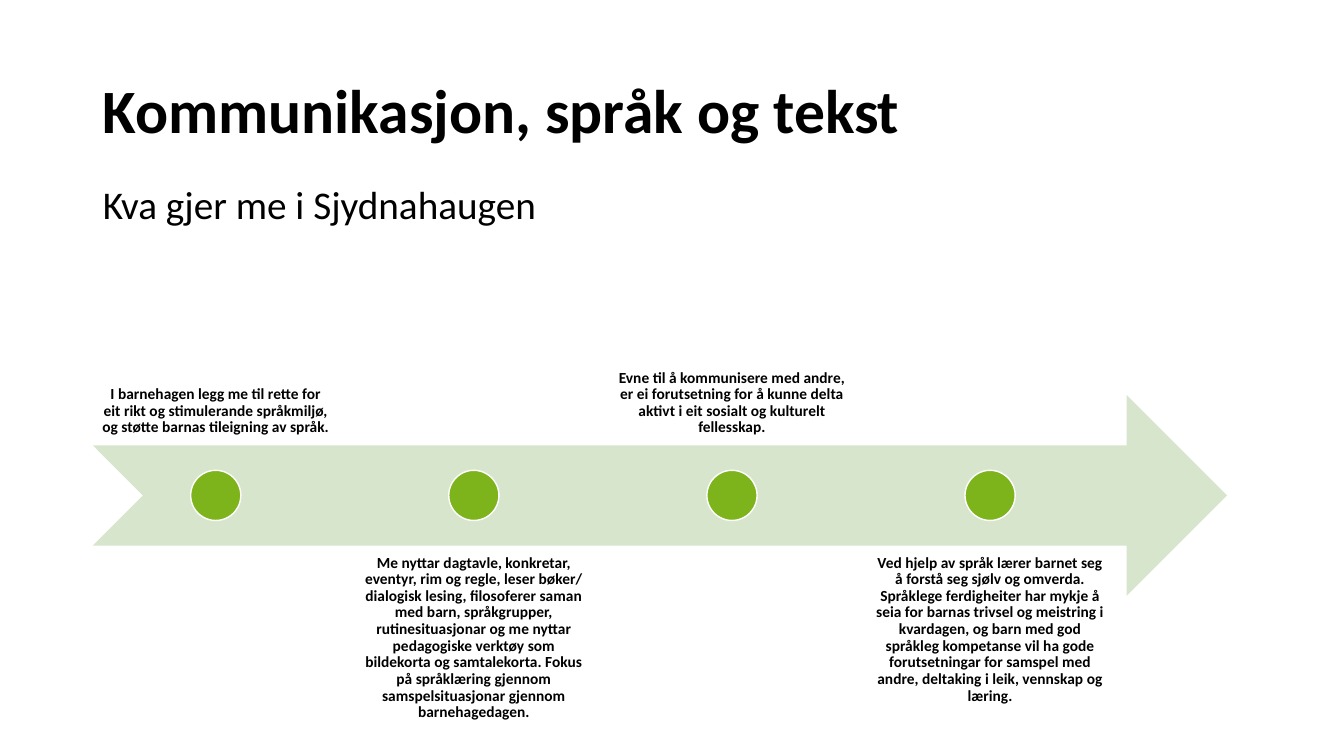
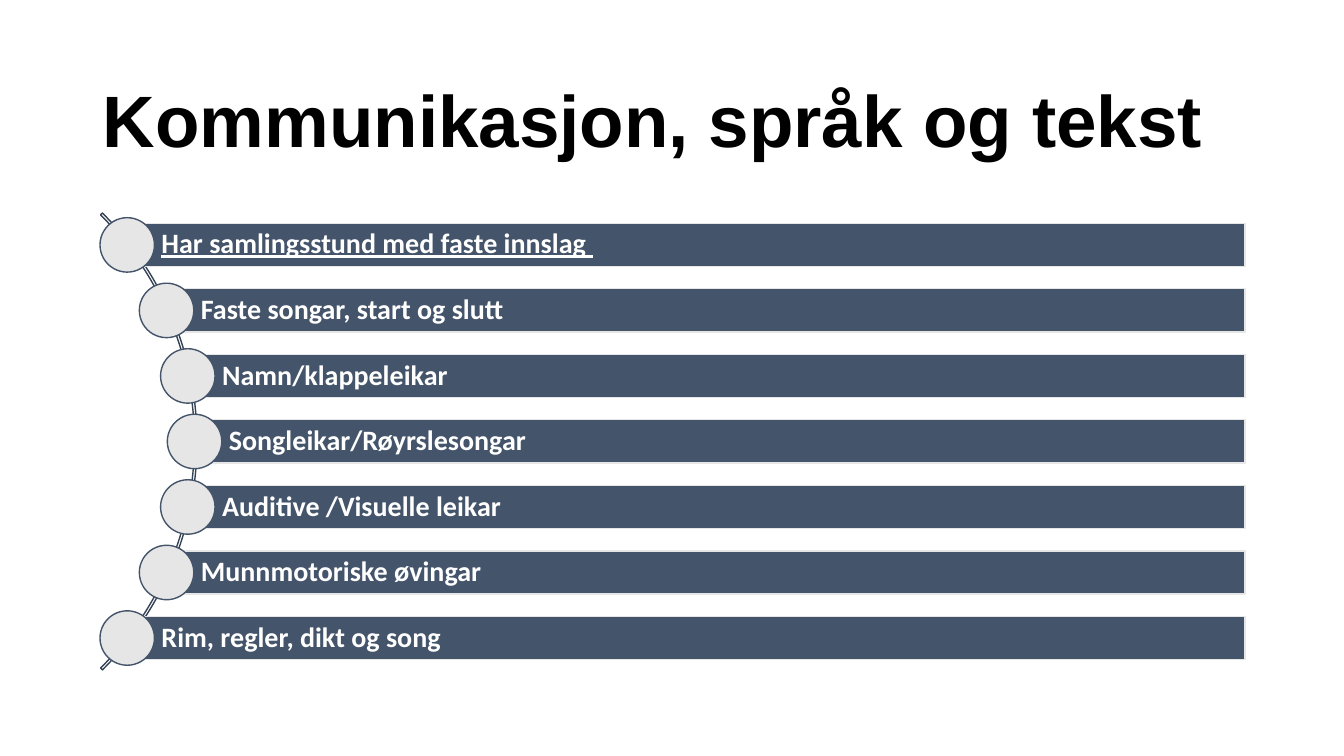
import math
import pptx
import pptx.util
import pptx.dml.color
import pptx.enum.shapes
import pptx.enum.text
import pptx.oxml

WIDE, HIGH = 13.33, 7.5
LEFT, SPAN = 0.92, 11.5
THEME = {
    "black": "000000", "white": "FFFFFF", "pale": "D7E5CD", "green": "7DB41B",
    "slate": "44546A", "grey": "E7E6E6", "dark": "364355",
    "font": "Calibri", "plain": "Arial",
    "title": 44, "large": 52, "lead": 28, "item": 20, "note": 11,
}
TITLE = "Kommunikasjon, språk og tekst"
LEAD = "Kva gjer me i Sjydnahaugen"
STEPS = [
    "I barnehagen legg me til rette for eit rikt og stimulerande språkmiljø, "
    "og støtte barnas tileigning av språk.",
    "Me nyttar dagtavle, konkretar, eventyr, rim og regle, leser bøker/ "
    "dialogisk lesing, filosoferer saman med barn, språkgrupper, "
    "rutinesituasjonar og me nyttar pedagogiske verktøy som bildekorta og "
    "samtalekorta. Fokus på språklæring gjennom samspelsituasjonar gjennom "
    "barnehagedagen.",
    "Evne til å kommunisere med andre, er ei forutsetning for å kunne delta "
    "aktivt i eit sosialt og kulturelt fellesskap.",
    "Ved hjelp av språk lærer barnet seg å forstå seg sjølv og omverda. "
    "Språklege ferdigheiter har mykje å seia for barnas trivsel og meistring "
    "i kvardagen, og barn med god språkleg kompetanse vil ha gode "
    "forutsetningar for samspel med andre, deltaking i leik, vennskap og "
    "læring.",
]
ITEMS = [
    "Har samlingsstund med faste innslag ",
    "Faste songar, start og slutt",
    "Namn/klappeleikar",
    "Songleikar/Røyrslesongar",
    "Auditive /Visuelle leikar",
    "Munnmotoriske øvingar",
    "Rim, regler, dikt og song",
]

KIND = pptx.enum.shapes.MSO_SHAPE
ALIGN = pptx.enum.text.PP_ALIGN
ANCHOR = pptx.enum.text.MSO_ANCHOR


def tint(name):
    return pptx.dml.color.RGBColor.from_string(THEME[name])


def place(shape, box):
    shape.left, shape.top, shape.width, shape.height = map(pptx.util.Inches, box)


def write(shape, text, size="note", color="black", font="font", bold=True,
          under=None, align=ALIGN.LEFT, anchor=ANCHOR.TOP,
          inset=(0.1, 0.05, 0.1, 0.05)):
    frame = shape.text_frame
    frame.word_wrap = True
    frame.auto_size = pptx.enum.text.MSO_AUTO_SIZE.NONE
    frame.vertical_anchor = anchor
    (frame.margin_left, frame.margin_top,
     frame.margin_right, frame.margin_bottom) = map(pptx.util.Inches, inset)
    frame.text = text
    para = frame.paragraphs[0]
    para.alignment = align
    para.line_spacing = 0.9
    para.space_before = pptx.util.Pt(0)
    face = para.runs[0].font
    face.name, face.size = THEME[font], pptx.util.Pt(THEME[size])
    face.bold, face.underline = bold, under
    face.color.rgb = tint(color)


def draw(slide, kind, box, fill=None, line=None):
    shape = slide.shapes.add_shape(kind, *map(pptx.util.Inches, box))
    shape.shadow.inherit = False
    if fill:
        shape.fill.solid()
        shape.fill.fore_color.rgb = tint(fill)
    else:
        shape.fill.background()
    if line:
        shape.line.color.rgb = tint(line)
        shape.line.width = pptx.util.Pt(1)
    else:
        shape.line.fill.background()
    return shape


def disc(slide, x, y, size, fill, line):
    draw(slide, KIND.OVAL, (x - size / 2, y - size / 2, size, size), fill, line)


def start(deck, layout, top, high, **style):
    slide = deck.slides.add_slide(deck.slide_layouts[layout])
    title = slide.shapes.title
    place(title, (LEFT, top, SPAN, high))
    write(title, TITLE, anchor=ANCHOR.MIDDLE, **style)
    return slide


def arrow(deck):
    slide = start(deck, 1, 0.4, 1.45, size="title")
    body = slide.placeholders[1]
    place(body, (LEFT, 1.79, SPAN, 5.51))
    write(body, LEAD, size="lead", bold=False)
    props = body.text_frame.paragraphs[0]._p.get_or_add_pPr()
    props.set("marL", "0")
    props.set("indent", "0")
    props.append(pptx.oxml.parse_xml(
        '<a:buNone xmlns:a="http://schemas.openxmlformats.org/drawingml/2006/main"/>'))

    top, high, wide, pitch = 3.92, 1.99, 2.44, 2.56
    mid = top + high / 2
    draw(slide, KIND.NOTCHED_RIGHT_ARROW, (LEFT, top, 11.25, high), "pale")
    for pos, text in enumerate(STEPS):
        x = LEFT + pos * pitch
        above = pos % 2 == 0
        y = mid - high * 1.25 if above else mid + high / 4
        note = slide.shapes.add_textbox(*map(pptx.util.Inches, (x, y, wide, high)))
        write(note, text, align=ALIGN.CENTER, inset=(0.09,) * 4,
              anchor=ANCHOR.BOTTOM if above else ANCHOR.TOP)
        disc(slide, x + wide / 2, mid, high / 4, "green", "white")


def curve(deck):
    slide = start(deck, 5, 0.61, 1.24, size="large", font="plain")
    hub, mid, side, reach = -1.255, 4.375, 6.41, 3.18
    hub, mid = round(hub, 2), round(mid, 2)
    pitch, right, high, dot = 0.65, 12.35, 0.43, 0.54
    arc = draw(slide, KIND.BLOCK_ARC,
               (hub - side / 2, mid - side / 2, side, side), line="dark")
    for pos, value in enumerate((189, 27, 0.004)):
        arc.adjustments[pos] = value
    for pos, text in enumerate(ITEMS):
        drop = (pos - (len(ITEMS) - 1) / 2) * pitch
        x, y = hub + math.sqrt(reach ** 2 - drop ** 2), mid + drop
        bar = draw(slide, KIND.RECTANGLE,
                   (x, y - high / 2, right - x, high), "slate", "grey")
        write(bar, text, size="item", color="white", under=pos == 0,
              anchor=ANCHOR.MIDDLE, inset=(0.34, 0.06, 0.06, 0.06))
        disc(slide, x, y, dot, "grey", "slate")


def main():
    deck = pptx.Presentation()
    deck.slide_width = pptx.util.Inches(WIDE)
    deck.slide_height = pptx.util.Inches(HIGH)
    arrow(deck)
    curve(deck)
    deck.save("out.pptx")


if __name__ == "__main__":
    main()
